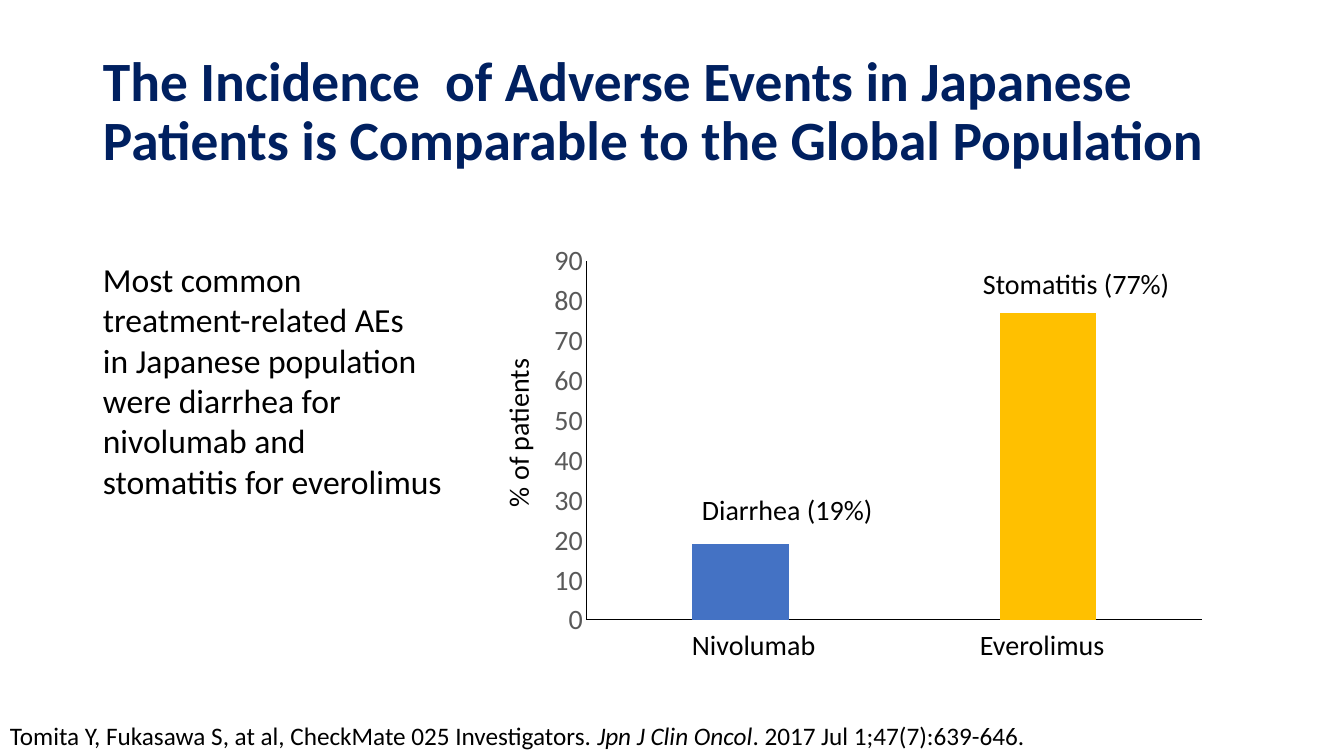
from pptx import Presentation
from pptx.chart.data import CategoryChartData
from pptx.dml.color import RGBColor
from pptx.enum.chart import XL_CHART_TYPE, XL_TICK_LABEL_POSITION, XL_TICK_MARK
from pptx.enum.text import MSO_ANCHOR
from pptx.oxml import parse_xml
from pptx.oxml.ns import nsdecls
from pptx.util import Pt

# Content
FONT = "Calibri"
NAVY, BLACK, GRAY, WHITE = "002060", "000000", "595959", "FFFFFF"
TITLE = "The Incidence  of Adverse Events in Japanese Patients is Comparable to the Global Population"
BODY = [
    "Most common treatment-related AEs",
    "in Japanese population were diarrhea for nivolumab and stomatitis for everolimus",
]
SOURCE = [
    ("Tomita Y, Fukasawa S, at al, CheckMate 025 Investigators. ", False),
    ("Jpn J Clin Oncol", True),
    (". 2017 Jul 1;47(7):639-646.", False),
]
EVENTS = [("Diarrhea", 19, "4472C4"), ("Stomatitis", 77, "FFC000")]
# text, box (left, top, width, height), rotation
LABELS = [
    ("Nivolumab", (682, 623, 145, 44), 0),
    ("Everolimus", (970, 623, 146, 44), 0),
    ("Diarrhea (19%)", (692, 488, 199, 44), 0),
    ("Stomatitis (77%)", (973, 262, 216, 44), 0),
    ("% of patients", (433, 410, 170, 44), 270),
]
CHART = (540, 235, 675, 412)
PLOT = (587, 261, 615, 359)


def px(n):
    return round(n * 914400 / 100.8)


def color(code):
    return RGBColor.from_string(code)


def style(font, size, code=BLACK, bold=False):
    font.name, font.size, font.bold = FONT, Pt(size), bold
    font.color.rgb = color(code)


def add_text(box, paras, size, code=BLACK, bold=False, wrap=True):
    shape = slide.shapes.add_textbox(*map(px, box))
    frame = shape.text_frame
    frame.word_wrap = wrap
    frame.text = "\n".join(paras)
    for para in frame.paragraphs:
        style(para.font, size, code, bold)
    return shape


deck = Presentation()
deck.slide_width, deck.slide_height = px(1344), px(756)
slide = deck.slides.add_slide(deck.slide_layouts[6])

# Title
title = add_text((93, 40, 1159, 146), [TITLE], 39.6, NAVY, True).text_frame
title.vertical_anchor = MSO_ANCHOR.MIDDLE
title.paragraphs[0].line_spacing = 0.9

# Chart
data = CategoryChartData()
data.categories = [name for name, _, _ in EVENTS]
data.add_series("Series 1", [value for _, value, _ in EVENTS])
chart = slide.shapes.add_chart(
    XL_CHART_TYPE.COLUMN_CLUSTERED, *map(px, CHART), data).chart
chart.has_legend = chart.has_title = False
style(chart.font, 10)
plot = chart.plots[0]
plot.gap_width, plot.overlap, plot.vary_by_categories = 219, -27, False
for i, (_, _, code) in enumerate(EVENTS):
    fill = plot.series[0].points[i].format.fill
    fill.solid()
    fill.fore_color.rgb = color(code)

# Axes
for axis, size in ((chart.category_axis, 9), (chart.value_axis, 20)):
    axis.has_major_gridlines = False
    axis.major_tick_mark = axis.minor_tick_mark = XL_TICK_MARK.NONE
    style(axis.tick_labels.font, size, GRAY)
    axis.format.line.color.rgb = color(BLACK)
    axis.format.line.width = Pt(0.75)
chart.category_axis.tick_label_position = XL_TICK_LABEL_POSITION.NONE
scale = chart.value_axis
scale.minimum_scale, scale.maximum_scale, scale.major_unit = 0, 90, 10

# Fixed plot area inside the chart frame
left, top, width, height = CHART
parts = {
    "x": (PLOT[0] - left) / width, "y": (PLOT[1] - top) / height,
    "w": PLOT[2] / width, "h": PLOT[3] / height,
}
modes = "".join(f'<c:{k}Mode val="edge"/>' for k in "xy")
sizes = "".join(f'<c:{k} val="{v:.4f}"/>' for k, v in parts.items())
layout = parse_xml(
    f'<c:layout {nsdecls("c")}><c:manualLayout><c:layoutTarget val="inner"/>'
    f'{modes}{sizes}</c:manualLayout></c:layout>')
area = chart._chartSpace.chart.plotArea
for old in area.xpath("c:layout"):
    area.remove(old)
area.insert(0, layout)

# Chart labels
for text, box, turn in LABELS:
    label = add_text(box, [text], 20, wrap=False)
    label.rotation = turn
    label.fill.solid()
    label.fill.fore_color.rgb = color(WHITE)

# Body and source
add_text((93, 254, 362, 254), BODY, 24)
source = add_text((0, 715, 1046, 40), [""], 18, wrap=False)
for text, slant in SOURCE:
    run = source.text_frame.paragraphs[0].add_run()
    run.text, run.font.italic = text, slant

deck.save("out.pptx")
